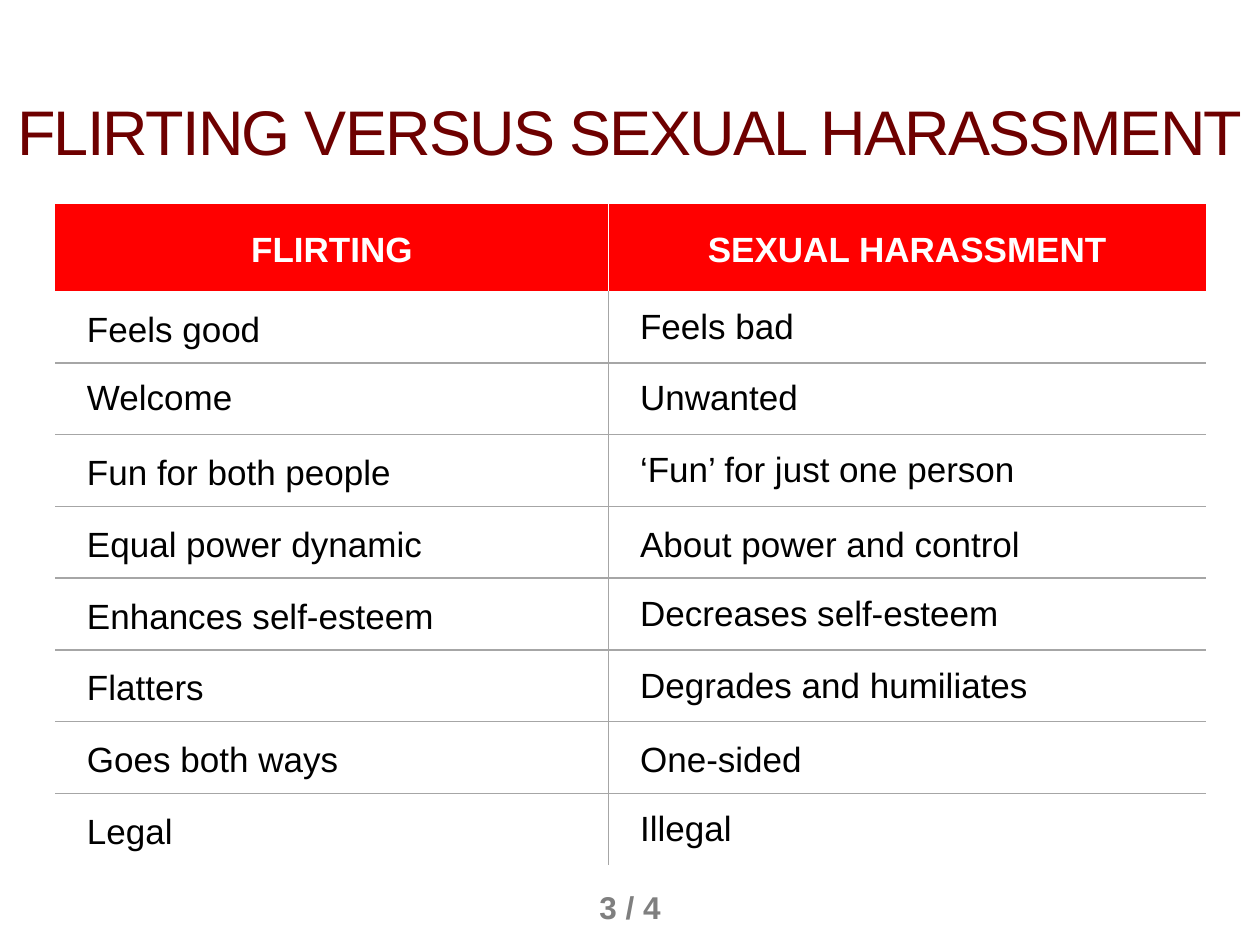
from lxml import etree
from pptx import Presentation
from pptx.dml.color import RGBColor
from pptx.enum.text import MSO_ANCHOR, PP_ALIGN
from pptx.oxml.ns import qn
from pptx.util import Inches, Pt

CENTER, LEFT = PP_ALIGN.CENTER, PP_ALIGN.LEFT
MIDDLE, BOTTOM = MSO_ANCHOR.MIDDLE, MSO_ANCHOR.BOTTOM
TITLE_ONLY = 5
COLORS = {"title": "6E0000", "page": "7F7F7F", "header": "FF0000",
          "white": "FFFFFF", "body": "000000", "rule": "A6A6A6"}
LOOSE, SINGLE = 1.15, 1.0
HEADERS = ["FLIRTING", "SEXUAL HARASSMENT"]
ROWS = [
    [("Feels good", LOOSE), ("Feels bad", SINGLE)],
    [("Welcome", SINGLE), ("Unwanted", SINGLE)],
    [("Fun for both people", LOOSE), ("‘Fun’ for just one person", SINGLE)],
    [("Equal power dynamic", LOOSE), ("About power and control", LOOSE)],
    [("Enhances self-esteem", LOOSE), ("Decreases self-esteem", SINGLE)],
    [("Flatters", LOOSE), ("Degrades and humiliates", SINGLE)],
    [("Goes both ways", LOOSE), ("One-sided", LOOSE)],
    [("Legal", LOOSE), ("Illegal", SINGLE)],
]
COL_WIDTHS = [4.39, 4.74]
HEADER_HEIGHT, ROW_HEIGHT = 0.69, 0.57
HEADER_MARGINS = {"margin_left": 0.09, "margin_right": 0.09,
                  "margin_top": 0, "margin_bottom": 0}
BODY_MARGINS = {"margin_left": 0.25, "margin_right": 0.1,
                "margin_top": 0.05, "margin_bottom": 0.05}


def set_attrs(obj, values):
    for name, value in values.items():
        setattr(obj, name, value)


def write(tf, text, size, color, bold=False, **para):
    p = tf.paragraphs[0]
    set_attrs(p, para)
    r = p.add_run()
    r.text = text
    set_attrs(r.font, {"name": "Arial", "size": Pt(size), "bold": bold})
    r.font.color.rgb = RGBColor.from_string(COLORS[color])
    return r


def set_borders(cell, colors):
    tcPr = cell._tc.get_or_add_tcPr()
    for i, side in enumerate("LRTB"):
        ln = etree.Element(qn(f"a:ln{side}"), w=str(Pt(1)))
        if side in colors:
            fill = etree.SubElement(ln, qn("a:solidFill"))
            etree.SubElement(fill, qn("a:srgbClr"), val=COLORS[colors[side]])
        else:
            etree.SubElement(ln, qn("a:noFill"))
        tcPr.insert(i, ln)


def format_cell(cell, margins, borders):
    cell.vertical_anchor = MIDDLE
    set_attrs(cell, {name: Inches(v) for name, v in margins.items()})
    set_borders(cell, borders)


def add_title(slide, text):
    sp = slide.shapes.title
    set_attrs(sp, {"left": Inches(-0.31), "top": Inches(0.76),
                   "width": Inches(10.62), "height": Inches(0.62)})
    set_attrs(sp.text_frame, {"vertical_anchor": BOTTOM, "word_wrap": True})
    r = write(sp.text_frame, text, 36, "title", alignment=CENTER, line_spacing=0.8)
    r.font._element.set("spc", "-100")


def add_page_number(slide, text):
    sp = slide.shapes.add_textbox(Inches(4.5), Inches(7), Inches(1), Inches(0.4))
    sp.text_frame.word_wrap = True
    write(sp.text_frame, text, 18, "page", True, alignment=CENTER)


def add_comparison(slide):
    height = HEADER_HEIGHT + ROW_HEIGHT * len(ROWS)
    table = slide.shapes.add_table(
        len(ROWS) + 1, len(HEADERS), Inches(0.44), Inches(1.62),
        Inches(sum(COL_WIDTHS)), Inches(height)).table
    set_attrs(table, {"first_row": False, "horz_banding": False})
    for col, width in zip(table.columns, COL_WIDTHS):
        col.width = Inches(width)
    for i, row in enumerate(table.rows):
        row.height = Inches(ROW_HEIGHT if i else HEADER_HEIGHT)
    inner_sides = ["R", "L"]
    for c, text in enumerate(HEADERS):
        cell = table.cell(0, c)
        cell.fill.solid()
        cell.fill.fore_color.rgb = RGBColor.from_string(COLORS["header"])
        format_cell(cell, HEADER_MARGINS, {inner_sides[c]: "white"})
        write(cell.text_frame, text, 20, "white", True, alignment=CENTER,
              line_spacing=LOOSE, space_after=Pt(6 * c))
    for i, entries in enumerate(ROWS, 1):
        for c, (text, spacing) in enumerate(entries):
            cell = table.cell(i, c)
            cell.fill.background()
            sides = inner_sides[c] + "T" * (i > 1) + "B" * (i < len(ROWS))
            format_cell(cell, BODY_MARGINS, dict.fromkeys(sides, "rule"))
            write(cell.text_frame, text, 20, "body", alignment=LEFT,
                  line_spacing=spacing, space_after=Pt(6))


def main():
    prs = Presentation()
    set_attrs(prs, {"slide_width": Inches(10), "slide_height": Inches(7.5)})
    slide = prs.slides.add_slide(prs.slide_layouts[TITLE_ONLY])
    add_title(slide, "FLIRTING VERSUS SEXUAL HARASSMENT")
    add_page_number(slide, "3 / 4")
    add_comparison(slide)
    prs.save("out.pptx")


if __name__ == "__main__":
    main()
